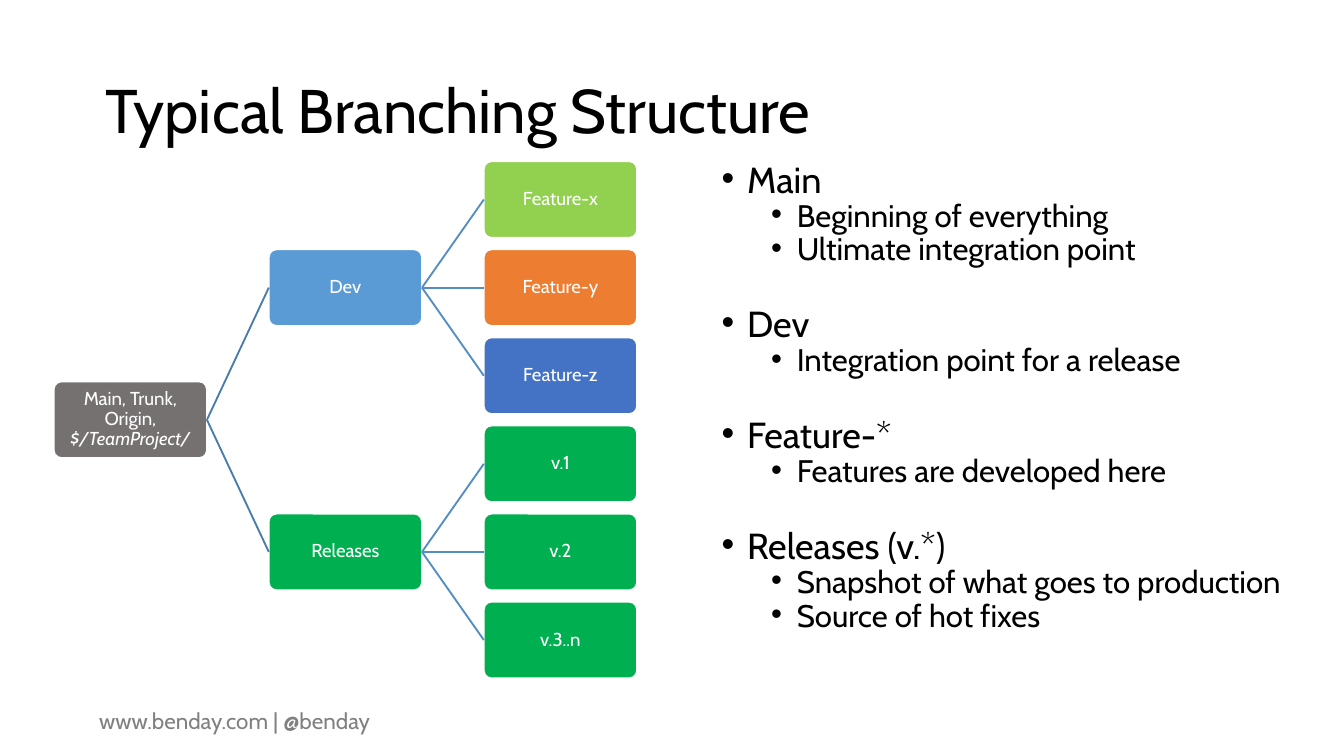
from dataclasses import dataclass

from lxml import etree
from pptx import Presentation
from pptx import util as u
from pptx.dml.color import RGBColor
from pptx.enum import shapes, text
from pptx.oxml import ns

FONT = "Cabin"
BLACK = RGBColor(0x00, 0x00, 0x00)
WHITE = RGBColor(0xFF, 0xFF, 0xFF)
FOOTER_GRAY = RGBColor(0x80, 0x80, 0x80)
TRUNK_GRAY = RGBColor(0x76, 0x71, 0x71)
BLUE = RGBColor(0x5B, 0x9B, 0xD5)
LIME = RGBColor(0x92, 0xD0, 0x50)
ORANGE = RGBColor(0xED, 0x7D, 0x31)
INDIGO = RGBColor(0x44, 0x72, 0xC4)
GREEN = RGBColor(0x00, 0xB0, 0x50)
TRUNK_LINK = RGBColor(0x49, 0x7C, 0xAB)
BRANCH_LINK = RGBColor(0x53, 0x8D, 0xC1)

SLIDE_WIDTH = 10
SLIDE_HEIGHT = SLIDE_WIDTH * 9 / 16
TREE_LEFT, TREE_TOP = 0.4, 1.2
BRANCH_WIDTH, BRANCH_HEIGHT = 1.14, 0.57
COLUMN_PITCH = 1.6
ROW_PITCH = BRANCH_HEIGHT * 1.15


@dataclass(frozen=True)
class Branch:
    label: str
    column: int
    row: float
    fill: RGBColor
    parent: str = ""
    path_label: str = ""


@dataclass(frozen=True)
class Topic:
    name: str
    details: tuple[str, ...]


@dataclass(frozen=True)
class BulletLevel:
    size: float
    indent: float
    space_before: float


TRUNK = "Main, Trunk, Origin,"
BRANCHES = (
    Branch(TRUNK, 0, 2.5, TRUNK_GRAY, path_label="$/TeamProject/"),
    Branch("Dev", 1, 1, BLUE, TRUNK),
    Branch("Feature-x", 2, 0, LIME, "Dev"),
    Branch("Feature-y", 2, 1, ORANGE, "Dev"),
    Branch("Feature-z", 2, 2, INDIGO, "Dev"),
    Branch("Releases", 1, 4, GREEN, TRUNK),
    Branch("v.1", 2, 3, GREEN, "Releases"),
    Branch("v.2", 2, 4, GREEN, "Releases"),
    Branch("v.3..n", 2, 5, GREEN, "Releases"),
)
TOPICS = (
    Topic("Main", ("Beginning of everything", "Ultimate integration point")),
    Topic("Dev", ("Integration point for a release",)),
    Topic("Feature-*", ("Features are developed here",)),
    Topic("Releases (v.*)", ("Snapshot of what goes to production", "Source of hot fixes")),
)
TOPIC_LEVEL = BulletLevel(19.4, 0.19, 25.3)
DETAIL_LEVEL = BulletLevel(16.7, 0.56, 3.8)


def add_run(paragraph, words: str, size: float, color: RGBColor, italic: bool = False) -> None:
    run = paragraph.add_run()
    run.text = words
    run.font.name = FONT
    run.font.size = u.Pt(size)
    run.font.color.rgb = color
    if italic:
        run.font.italic = True


def add_frame(slide, left: float, top: float, width: float, height: float, wrap: bool = True):
    frame = slide.shapes.add_textbox(
        u.Inches(left), u.Inches(top), u.Inches(width), u.Inches(height)
    ).text_frame
    frame.word_wrap = wrap
    return frame


def add_bullet(paragraph, words: str, level: BulletLevel, first: bool) -> None:
    properties = paragraph._p.get_or_add_pPr()
    properties.set("marL", str(u.Inches(level.indent)))
    properties.set("indent", str(u.Inches(-0.19)))
    etree.SubElement(properties, ns.qn("a:buFont"), typeface="Arial")
    etree.SubElement(properties, ns.qn("a:buChar"), char="•")
    paragraph.line_spacing = 0.7
    paragraph.space_before = u.Pt(0 if first else level.space_before)
    add_run(paragraph, words, level.size, BLACK)


def add_topics(slide, topics: tuple[Topic, ...]) -> None:
    frame = add_frame(slide, 5.27, 1.21, 4.41, 4.13)
    for index, topic in enumerate(topics):
        heading = frame.add_paragraph() if index else frame.paragraphs[0]
        add_bullet(heading, topic.name, TOPIC_LEVEL, index == 0)
        for detail in topic.details:
            bullet = frame.add_paragraph()
            bullet.level = 1
            add_bullet(bullet, detail, DETAIL_LEVEL, False)


def add_branch(slide, branch: Branch):
    box = slide.shapes.add_shape(
        shapes.MSO_SHAPE.ROUNDED_RECTANGLE,
        u.Inches(TREE_LEFT + branch.column * COLUMN_PITCH),
        u.Inches(TREE_TOP + branch.row * ROW_PITCH),
        u.Inches(BRANCH_WIDTH),
        u.Inches(BRANCH_HEIGHT),
    )
    box.adjustments[0] = 0.1
    box.shadow.inherit = False
    box.fill.solid()
    box.fill.fore_color.rgb = branch.fill
    box.line.color.rgb = WHITE
    box.line.width = u.Pt(1)

    frame = box.text_frame
    frame.word_wrap = True
    frame.vertical_anchor = text.MSO_ANCHOR.MIDDLE
    frame.margin_left = frame.margin_right = u.Inches(0.01)
    frame.margin_top = frame.margin_bottom = u.Inches(0.01)
    label = frame.paragraphs[0]
    label.alignment = text.PP_ALIGN.CENTER
    label.line_spacing = 0.9
    add_run(label, branch.label, 10, WHITE)
    if branch.path_label:
        label.add_line_break()
        add_run(label, branch.path_label, 10, WHITE, italic=True)
    return box


def add_link(slide, parent, child, color: RGBColor) -> None:
    link = slide.shapes.add_connector(shapes.MSO_CONNECTOR.STRAIGHT, 0, 0, 0, 0)
    link.begin_connect(parent, 3)
    link.end_connect(child, 1)
    link.line.color.rgb = color
    link.line.width = u.Pt(1)
    etree.SubElement(link._element.spPr, ns.qn("a:effectLst"))


def add_tree(slide, branches: tuple[Branch, ...]) -> None:
    boxes = {}
    for branch in branches:
        boxes[branch.label] = add_branch(slide, branch)
        if branch.parent:
            color = TRUNK_LINK if branch.parent == TRUNK else BRANCH_LINK
            add_link(slide, boxes[branch.parent], boxes[branch.label], color)


def main() -> None:
    deck = Presentation()
    deck.slide_width = u.Inches(SLIDE_WIDTH)
    deck.slide_height = u.Inches(SLIDE_HEIGHT)
    slide = deck.slides.add_slide(deck.slide_layouts[6])

    footer = add_frame(slide, 0.64, 5.21, 2.33, 0.3, wrap=False)
    add_run(footer.paragraphs[0], "www.benday.com | @benday", 12, FOOTER_GRAY)

    title = add_frame(slide, 0.69, 0.3, 8.62, 1.09)
    title.vertical_anchor = text.MSO_ANCHOR.MIDDLE
    title.paragraphs[0].line_spacing = 0.9
    add_run(title.paragraphs[0], "Typical Branching Structure", 33, BLACK)

    add_topics(slide, TOPICS)
    add_tree(slide, BRANCHES)
    deck.save("out.pptx")


if __name__ == "__main__":
    main()
